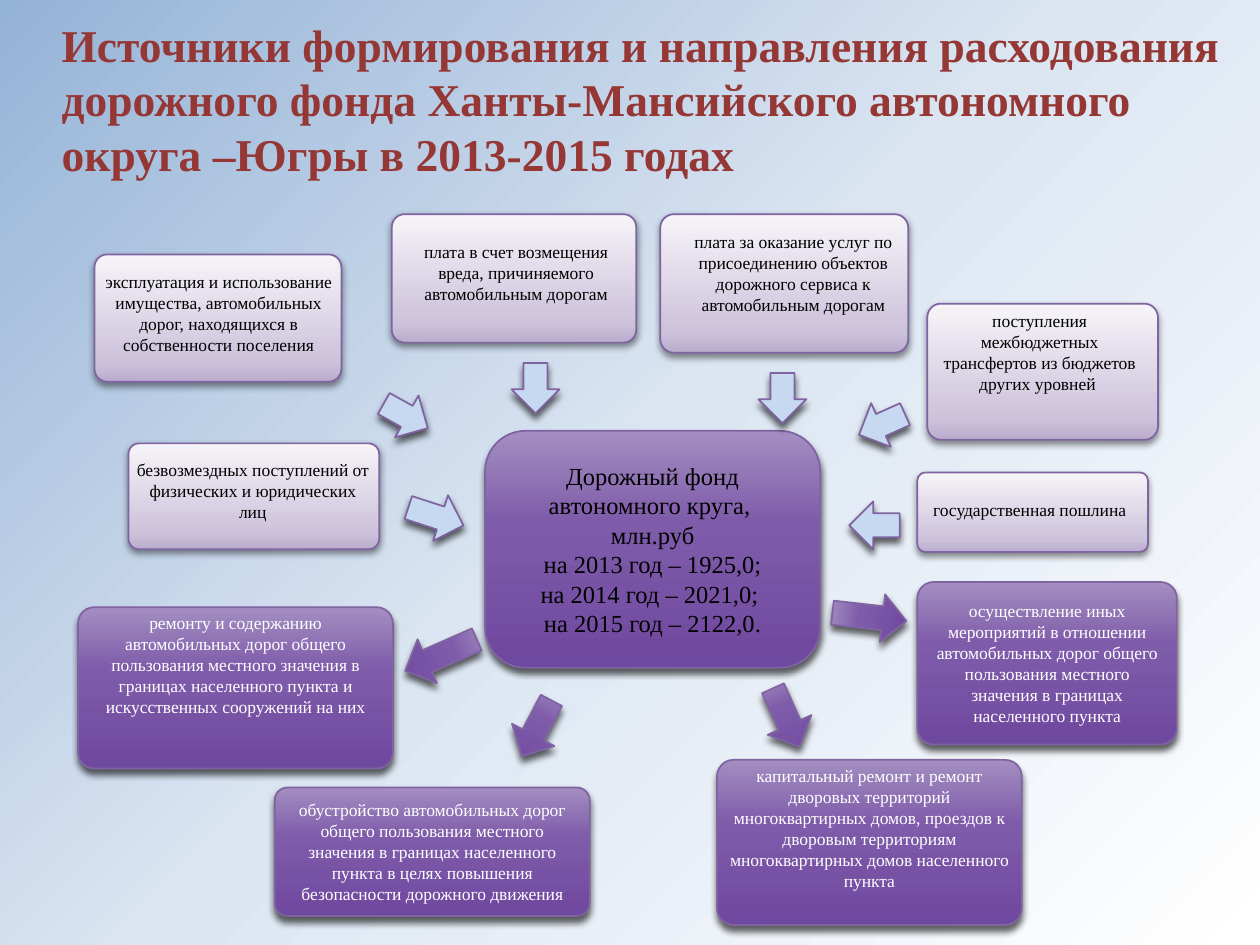
from lxml.etree import SubElement
from pptx import Presentation
from pptx.dml.color import RGBColor
from pptx.enum.shapes import MSO_SHAPE
from pptx.enum.text import MSO_ANCHOR, MSO_AUTO_SIZE, PP_ALIGN
from pptx.oxml.ns import qn
from pptx.util import Pt

BLACK = RGBColor(0x00, 0x00, 0x00)
WHITE = RGBColor(0xFF, 0xFF, 0xFF)
TITLE_RED = RGBColor(0x95, 0x37, 0x35)
OUTLINE = RGBColor(0x80, 0x64, 0xA2)
LIGHT_BLUE = RGBColor(0xC6, 0xD9, 0xF1)
DARK_STOPS = [(0, RGBColor(0x6F, 0x48, 0x9F)), (62, RGBColor(0x7F, 0x5C, 0xAA)),
              (100, RGBColor(0xA3, 0x8E, 0xC1))]
PALE_STOPS = [(0, RGBColor(0xB9, 0xAC, 0xCD)), (15, RGBColor(0xCC, 0xC2, 0xDB)),
              (100, RGBColor(0xF6, 0xF4, 0xF8))]
PAGE_STOPS = [(0, WHITE), (50, RGBColor(0xDC, 0xE6, 0xF2)),
              (100, RGBColor(0x95, 0xB3, 0xD7))]

TITLE = ("Источники формирования и направления расходования дорожного фонда "
         "Ханты-Мансийского автономного округа –Югры в 2013-2015 годах")
FUND = ["Дорожный фонд автономного круга, ", "млн.руб", "на 2013 год – 1925,0;",
        "на 2014 год – 2021,0; ", "на 2015 год – 2122,0."]

# Income: box, text area, text
SOURCES = [
    ((524.2, 270, 131.8, 45.4), (524.2, 281.5, 128.2, 19.4), "государственная пошлина"),
    ((223.9, 122.4, 139.7, 73.4), (229.7, 133.9, 130.3, 43.9),
     "плата в счет возмещения вреда, причиняемого автомобильным дорогам"),
    ((377.3, 122.4, 141.8, 79.2), (377.3, 128.2, 151.9, 70.6),
     "плата за оказание услуг по присоединению объектов дорожного сервиса к "
     "автомобильным дорогам"),
    ((73.4, 253.4, 143.3, 60.5), (70.6, 258.5, 147.6, 43.9),
     "безвозмездных поступлений от физических и юридических лиц"),
    ((54, 145.4, 141.1, 72.7), (48.2, 151.2, 153.4, 67.7),
     "эксплуатация и использование имущества, автомобильных дорог, находящихся "
     "в собственности поселения"),
    ((529.9, 173.5, 131.8, 77.8), (529.9, 173.5, 128.2, 55.4),
     "поступления межбюджетных трансфертов из бюджетов других уровней "),
]
# Spending: box, side inset, anchor, text
USES = [
    ((409.7, 434.2, 174.2, 94.3), 3, MSO_ANCHOR.TOP,
     "капитальный ремонт и ремонт дворовых территорий многоквартирных домов, "
     "проездов к дворовым территориям многоквартирных домов населенного пункта"),
    ((44.6, 347, 180, 92.2), 6, MSO_ANCHOR.TOP,
     "ремонту и содержанию автомобильных дорог общего пользования местного значения "
     "в границах населенного пункта и искусственных сооружений на них"),
    ((157, 450, 180, 73.4), 6, MSO_ANCHOR.MIDDLE,
     "обустройство автомобильных дорог общего пользования местного значения в границах "
     "населенного пункта в целях повышения безопасности дорожного движения"),
    ((524.2, 332.6, 148.3, 92.9), 6, MSO_ANCHOR.MIDDLE,
     "осуществление иных мероприятий в отношении автомобильных дорог общего "
     "пользования местного значения в границах населенного пункта"),
]
# Arrows: left, top, length, rotation
ARROW_WIDTH = 27.4
ARROWS_OUT = [(238.3, 352.1, 44.6, 66.3), (435.6, 391.7, 36.7, 335.7),
              (483.1, 331.2, 42.5, 276.4), (293, 398.2, 36, 27.8)]
ARROWS_IN = [(235.4, 278.6, 33.1, 288), (218.2, 223.2, 28.8, 299.2),
             (292.3, 207.4, 28.8, 0), (486, 285.8, 28.8, 90),
             (433.4, 213.1, 28.8, 0), (490.3, 228.2, 28.8, 65.8)]


def write(tf, lines, size=10, color=BLACK, bold=False, align=PP_ALIGN.CENTER,
          anchor=MSO_ANCHOR.TOP, insets=(7.2, 3.6)):
    tf.word_wrap = True
    tf.auto_size = MSO_AUTO_SIZE.NONE
    tf.vertical_anchor = anchor
    tf.margin_left = tf.margin_right = Pt(insets[0])
    tf.margin_top = tf.margin_bottom = Pt(insets[1])
    for i, line in enumerate(lines):
        p = tf.add_paragraph() if i else tf.paragraphs[0]
        p.alignment = align
        r = p.add_run()
        r.text = line
        r.font.name = "Times New Roman"
        r.font.size = Pt(size)
        r.font.bold = bold
        r.font.color.rgb = color


def gradient(fill, owner, stops):
    """Fill with the given stops, running from bottom to top."""
    fill.gradient()
    fill.gradient_angle = 90
    grad = next(owner.iter(qn("a:gradFill")))
    gs_list = grad.find(qn("a:gsLst"))
    for gs in list(gs_list):
        gs_list.remove(gs)
    for pos, color in stops:
        gs = SubElement(gs_list, qn("a:gs"), pos=str(pos * 1000))
        SubElement(gs, qn("a:srgbClr"), val=str(color))
    return grad


class Diagram:
    def __init__(self, slide):
        self.s = slide

    def background(self):
        bg = self.s.background
        grad = gradient(bg.fill, self.s.element, PAGE_STOPS)
        grad.remove(grad.find(qn("a:lin")))
        path = SubElement(grad, qn("a:path"), path="circle")
        SubElement(path, qn("a:fillToRect"), l="100000", t="100000")

    def title(self, text, area):
        sp = self.s.shapes.title
        sp.left, sp.top, sp.width, sp.height = map(Pt, area)
        write(sp.text_frame, [text], size=26, color=TITLE_RED, bold=True,
              align=PP_ALIGN.LEFT, anchor=MSO_ANCHOR.BOTTOM)

    def shape(self, kind, area, fill, opacity=61, distance=3):
        sp = self.s.shapes.add_shape(kind, *map(Pt, area))
        if isinstance(fill, RGBColor):
            sp.fill.solid()
            sp.fill.fore_color.rgb = fill
        else:
            gradient(sp.fill, sp.element, fill)
        sp.line.color.rgb = OUTLINE
        sp.line.width = Pt(1)
        sp.shadow.inherit = False
        effects = next(sp.element.iter(qn("a:effectLst")))
        shadow = SubElement(effects, qn("a:outerShdw"), blurRad=str(Pt(4)),
                            dist=str(Pt(distance)), dir="5400000", rotWithShape="0")
        color = SubElement(shadow, qn("a:srgbClr"), val=str(BLACK))
        SubElement(color, qn("a:alpha"), val=str(opacity * 1000))
        return sp

    def box(self, area, fill, corner=0.1, **shadow):
        sp = self.shape(MSO_SHAPE.ROUNDED_RECTANGLE, area, fill, **shadow)
        sp.adjustments[0] = corner
        return sp

    def label(self, area, text):
        write(self.s.shapes.add_textbox(*map(Pt, area)).text_frame, [text])

    def arrow(self, left, top, length, rotation, fill):
        area = (left, top, ARROW_WIDTH, length)
        self.shape(MSO_SHAPE.DOWN_ARROW, area, fill).rotation = rotation


def main():
    prs = Presentation()
    prs.slide_width, prs.slide_height = Pt(720), Pt(540)
    d = Diagram(prs.slides.add_slide(prs.slide_layouts[5]))
    d.background()
    d.title(TITLE, (28, 0, 692, 106.6))

    # Road fund in the centre
    sp = d.box((277.2, 246.2, 191.5, 135.4), DARK_STOPS, corner=0.17)
    write(sp.text_frame, FUND, size=14, anchor=MSO_ANCHOR.MIDDLE, insets=(3, 3))

    # Income sources
    for area, text_area, text in SOURCES:
        d.box(area, PALE_STOPS, opacity=43, distance=2)
        d.label(text_area, text)

    # Spending directions
    for area, inset, anchor, text in USES:
        sp = d.box(area, DARK_STOPS)
        write(sp.text_frame, [text], color=WHITE, anchor=anchor, insets=(inset, 0))

    # Arrows from and to the fund
    for arrows, fill in ((ARROWS_OUT, DARK_STOPS), (ARROWS_IN, LIGHT_BLUE)):
        for arrow in arrows:
            d.arrow(*arrow, fill)

    prs.save("out.pptx")


if __name__ == "__main__":
    main()
